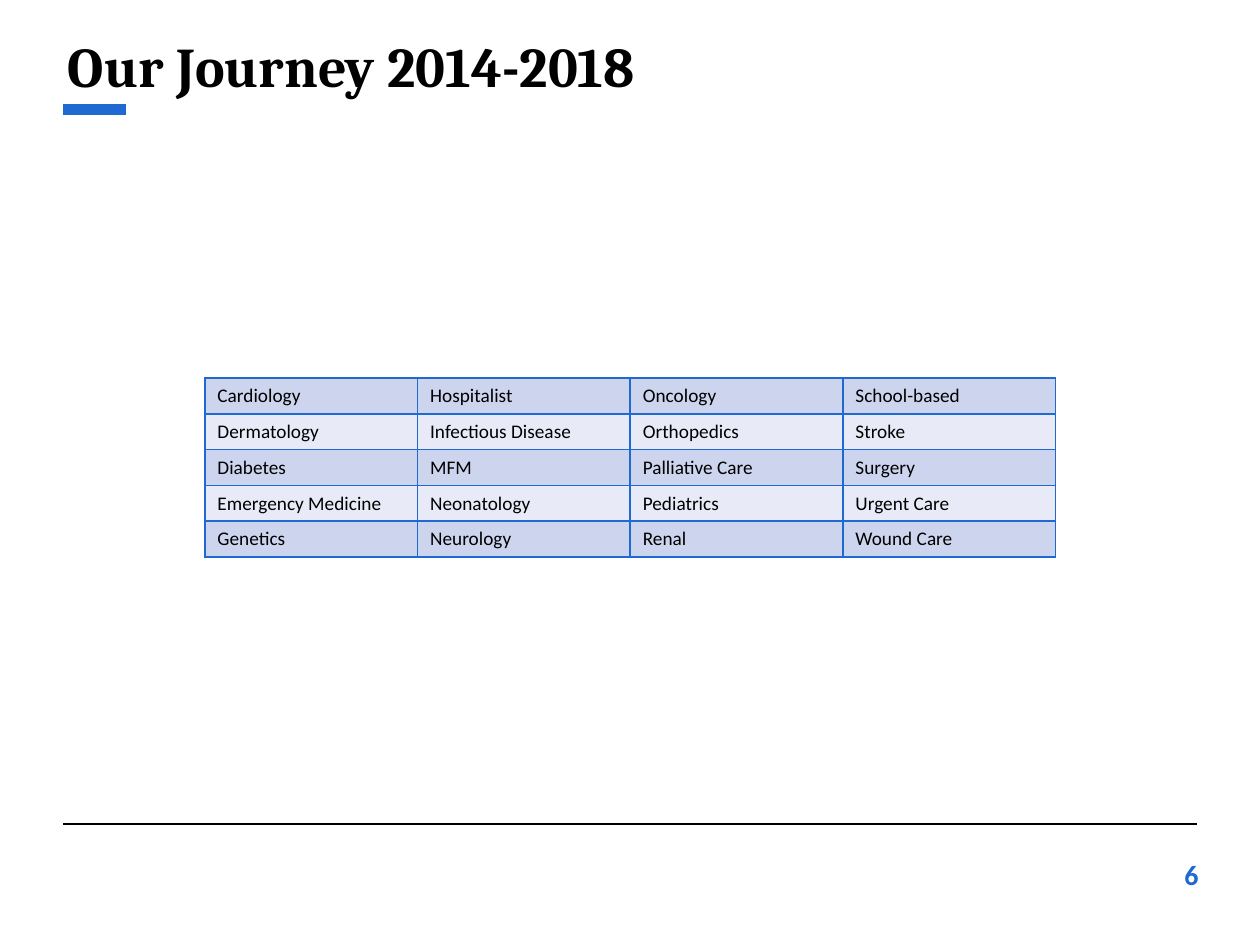
import pptx
import pptx.dml.color
import pptx.enum.shapes
import pptx.enum.text
import pptx.oxml
import pptx.oxml.ns
import pptx.util

Cm = pptx.util.Cm
Pt = pptx.util.Pt
RGB = pptx.dml.color.RGBColor
ALIGN = pptx.enum.text.PP_ALIGN
ANCHOR = pptx.enum.text.MSO_ANCHOR

BLUE = RGB(0x1E, 0x69, 0xD2)
BLACK = RGB(0, 0, 0)
BANDS = [RGB(0xCD, 0xD4, 0xEE), RGB(0xE8, 0xEB, 0xF7)]

FIELDS = [
    ["Cardiology", "Hospitalist", "Oncology", "School-based"],
    ["Dermatology", "Infectious Disease", "Orthopedics", "Stroke"],
    ["Diabetes", "MFM", "Palliative Care", "Surgery"],
    ["Emergency Medicine", "Neonatology", "Pediatrics", "Urgent Care"],
    ["Genetics", "Neurology", "Renal", "Wound Care"],
]


def style(para, name, size, color, bold=False):
    font = para.font
    font.name = name
    font.size = Pt(size)
    font.color.rgb = color
    font.bold = bold


def add_rule(slide, left, top, width, color, weight):
    kind = pptx.enum.shapes.MSO_CONNECTOR.STRAIGHT
    rule = slide.shapes.add_connector(
        kind, Cm(left), Cm(top), Cm(left + width), Cm(top))
    rule.line.color.rgb = color
    rule.line.width = Pt(weight)
    props = rule.element.spPr
    props.append(props.makeelement(pptx.oxml.ns.qn("a:effectLst"), {}))


def add_text(slide, left, top, width, height, text):
    frame = slide.shapes.add_textbox(
        Cm(left), Cm(top), Cm(width), Cm(height)).text_frame
    frame.word_wrap = True
    frame.vertical_anchor = ANCHOR.MIDDLE
    frame.text = text
    return frame.paragraphs[0]


def add_head(slide, left, top, width, height):
    para = add_text(slide, left - 0.15, top, width + 0.3, height,
                    "Our Journey 2014-2018")
    style(para, "Cambria", 32, BLACK, True)
    add_rule(slide, left, top + height + 0.05, 1.27, BLUE, 6)


def add_foot(slide, left, top, width):
    add_rule(slide, left, top, width, BLACK, 0.75)
    para = add_text(slide, left + width - 1.57, top + 0.54, 1.85, 0.94, "6")
    para.alignment = ALIGN.RIGHT
    style(para, "Calibri", 16, BLUE, True)


def add_edges(cell):
    props = cell._tc.get_or_add_tcPr()
    for side in "LRTB":
        props.append(pptx.oxml.parse_xml(
            f'<a:ln{side} {pptx.oxml.ns.nsdecls("a")} w="{Pt(1)}">'
            f'<a:solidFill><a:srgbClr val="{BLUE}"/></a:solidFill>'
            f'</a:ln{side}>'))


def add_grid(slide, left, top, width, height):
    rows, cols = len(FIELDS), len(FIELDS[0])
    table = slide.shapes.add_table(
        rows, cols, Cm(left), Cm(top), Cm(width), Cm(height)).table
    table.first_row = False
    for row, names in enumerate(FIELDS):
        for col, name in enumerate(names):
            cell = table.cell(row, col)
            add_edges(cell)
            cell.fill.solid()
            cell.fill.fore_color.rgb = BANDS[row % 2]
            cell.text = name
            style(cell.text_frame.paragraphs[0], "Calibri", 11, BLACK)


def main():
    deck = pptx.Presentation()
    deck.slide_width = Cm(25.4)
    deck.slide_height = Cm(19.05)
    slide = deck.slides.add_slide(deck.slide_layouts[6])
    add_head(slide, 1.27, 0.48, 22.86, 1.68)
    add_grid(slide, 4.13, 7.62, 17.15, 3.45)
    add_foot(slide, 1.27, 16.61, 22.86)
    deck.save("out.pptx")


if __name__ == "__main__":
    main()
